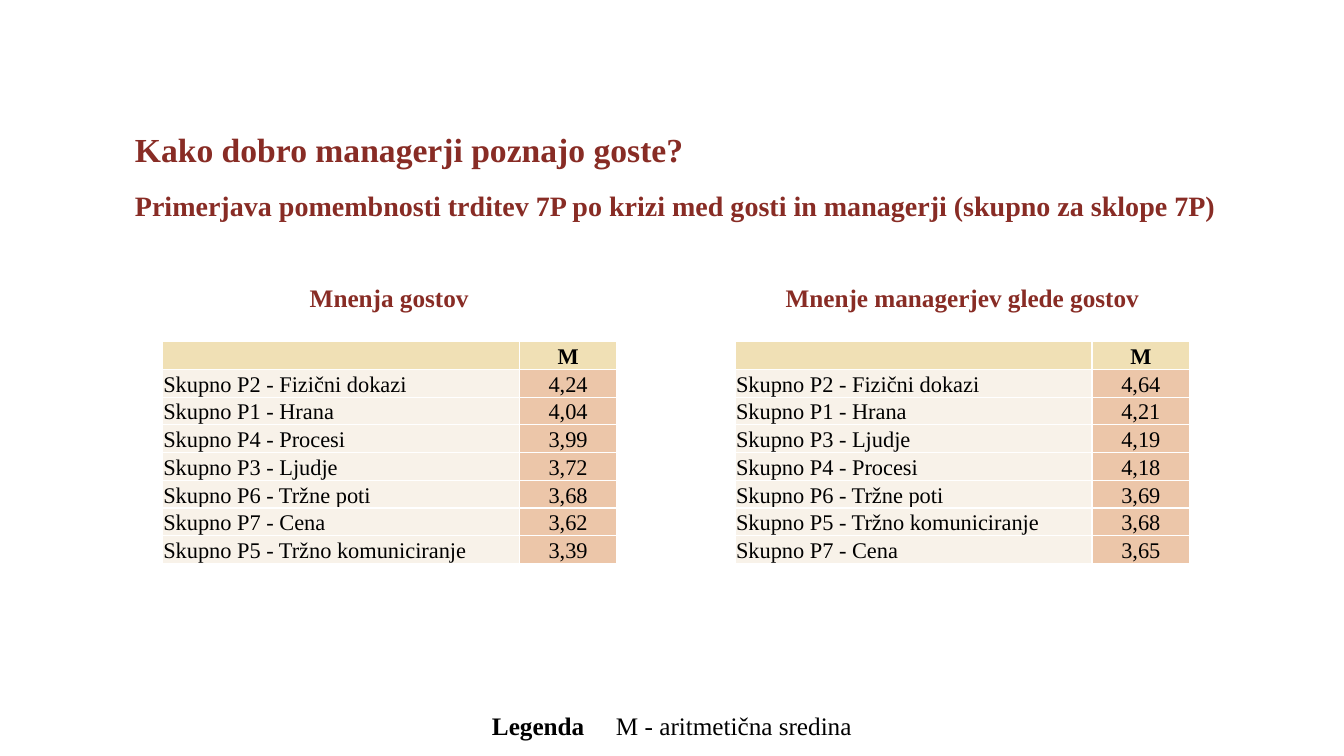
import pptx
import pptx.dml.color
import pptx.enum.text
import pptx.oxml.ns
import pptx.util
from lxml import etree

COLORS = {"heading": "882C25", "text": "000000", "border": "FFFFFF",
          "header": "F0E0B5", "label": "F8F2E9", "value": "ECC6A9"}
EMU_PER_PX = 9144
LEFT = pptx.enum.text.PP_ALIGN.LEFT
CENTER = pptx.enum.text.PP_ALIGN.CENTER

GUESTS = [
    ("Skupno P2 - Fizični dokazi", "4,24"),
    ("Skupno P1 - Hrana", "4,04"),
    ("Skupno P4 - Procesi", "3,99"),
    ("Skupno P3 - Ljudje", "3,72"),
    ("Skupno P6 - Tržne poti", "3,68"),
    ("Skupno P7 - Cena", "3,62"),
    ("Skupno P5 - Tržno komuniciranje", "3,39"),
]
MANAGERS = [
    ("Skupno P2 - Fizični dokazi", "4,64"),
    ("Skupno P1 - Hrana", "4,21"),
    ("Skupno P3 - Ljudje", "4,19"),
    ("Skupno P4 - Procesi", "4,18"),
    ("Skupno P6 - Tržne poti", "3,69"),
    ("Skupno P5 - Tržno komuniciranje", "3,68"),
    ("Skupno P7 - Cena", "3,65"),
]


def px(length):
    return pptx.util.Emu(length * EMU_PER_PX)


def rgb(name):
    return pptx.dml.color.RGBColor.from_string(COLORS[name])


def qn(tag):
    return pptx.oxml.ns.qn(tag)


class SlideBuilder:
    font = "Times New Roman"

    def __init__(self, slide):
        self.slide = slide

    def style(self, run, size, color, bold):
        run.font.name = self.font
        run.font.size = pptx.util.Pt(size)
        run.font.bold = bold
        run.font.color.rgb = rgb(color)

    def text_box(self, left, top, width, height, wrap=True):
        shape = self.slide.shapes.add_textbox(px(left), px(top), px(width), px(height))
        shape.text_frame.word_wrap = wrap
        return shape.text_frame

    def title(self, left, top, width, height, lines):
        """Lines are (text, size, points of space before)."""
        frame = self.text_box(left, top, width, height)
        frame.text = "\n".join(line[0] for line in lines)
        for paragraph, (_, size, gap) in zip(frame.paragraphs, lines):
            if gap:
                paragraph.space_before = pptx.util.Pt(gap)
            self.style(paragraph.runs[0], size, "heading", True)

    def caption(self, left, top, width, height, text):
        frame = self.text_box(left, top, width, height, wrap=False)
        frame.text = text
        paragraph = frame.paragraphs[0]
        paragraph.alignment = CENTER
        self.style(paragraph.runs[0], 18, "heading", True)

    def legend(self, left, top, width, height, indent, tab, term, meaning):
        """Puts a bold term and, at a tab stop, its meaning on one line."""
        frame = self.text_box(left, top, width, height)
        frame.margin_left = px(indent)
        paragraph = frame.paragraphs[0]
        tabs = etree.SubElement(paragraph._p.get_or_add_pPr(), qn("a:tabLst"))
        etree.SubElement(tabs, qn("a:tab"), pos=str(px(tab)), algn="l")
        for text, bold in ((term, True), ("\t" + meaning, False)):
            run = paragraph.add_run()
            run.text = text
            self.style(run, 18, "text", bold)

    def cell(self, cell, text, fill, alignment, margin, bold):
        properties = cell._tc.get_or_add_tcPr()
        for side in ("a:lnL", "a:lnR", "a:lnT", "a:lnB"):
            line = etree.SubElement(properties, qn(side), w=str(pptx.util.Pt(1)))
            solid = etree.SubElement(line, qn("a:solidFill"))
            etree.SubElement(solid, qn("a:srgbClr"), val=COLORS["border"])
        cell.fill.solid()
        cell.fill.fore_color.rgb = rgb(fill)
        cell.margin_left = cell.margin_right = cell.margin_top = px(margin)
        cell.margin_bottom = 0
        cell.vertical_anchor = pptx.enum.text.MSO_ANCHOR.BOTTOM
        cell.text_frame.text = text
        paragraph = cell.text_frame.paragraphs[0]
        paragraph.alignment = alignment
        for run in paragraph.runs:
            self.style(run, 16, "text", bold)
        if not text:
            etree.SubElement(paragraph._p, qn("a:endParaRPr"), sz="1600")

    def table(self, left, top, widths, height, rows):
        all_rows = [("", "M")] + rows
        table = self.slide.shapes.add_table(
            len(all_rows), len(widths), px(left), px(top), px(sum(widths)), px(height)).table
        table.first_row = table.horz_banding = False
        for column, width in zip(table.columns, widths):
            column.width = px(width)
        for index, values in enumerate(all_rows):
            header = index == 0
            table.rows[index].height = px(height) // len(all_rows)
            for column, (text, fill, alignment) in enumerate(
                    zip(values, ("label", "value"), (LEFT, CENTER))):
                self.cell(table.cell(index, column), text, "header" if header else fill,
                          alignment, 0 if header else 1, header)


def main():
    presentation = pptx.Presentation()
    presentation.slide_width = px(1333)
    presentation.slide_height = px(750)
    builder = SlideBuilder(presentation.slides.add_slide(presentation.slide_layouts[6]))
    for left, rows in ((161, GUESTS), (729, MANAGERS)):
        builder.table(left, 339, (354, 97), 220, rows)
    builder.legend(53, 700, 1227, 40, 435, 123, "Legenda", "M - aritmetična sredina")
    builder.title(124, 123, 1093, 104, [
        ("Kako dobro managerji poznajo goste?", 24, 0),
        ("Primerjava pomembnosti trditev 7P po krizi med gosti in managerji "
         "(skupno za sklope 7P)", 20, 14),
    ])
    builder.caption(297, 275, 178, 40, "Mnenja gostov")
    builder.caption(768, 275, 373, 40, "Mnenje managerjev glede gostov")
    presentation.save("out.pptx")


if __name__ == "__main__":
    main()
